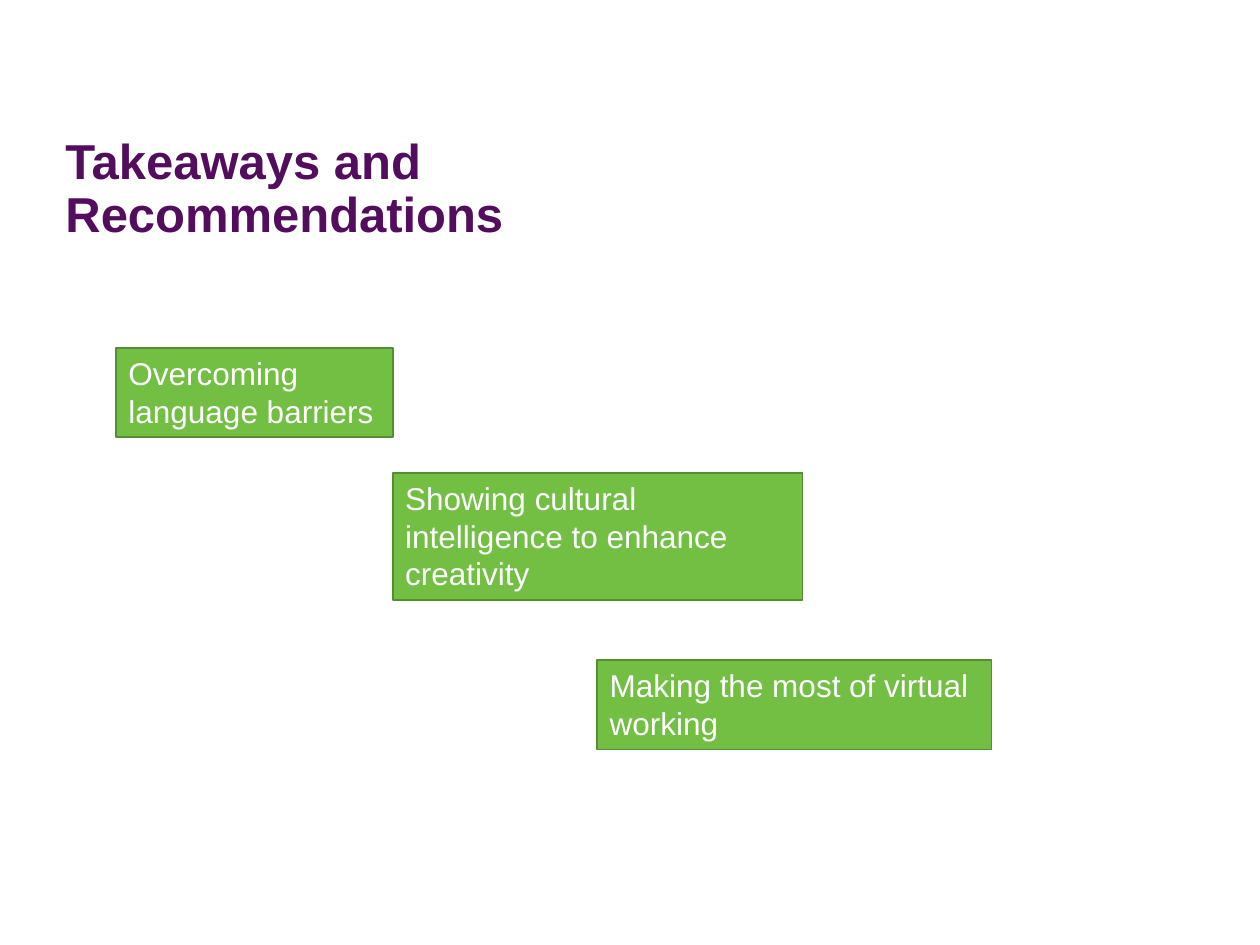
import pptx
import pptx.dml.color
import pptx.enum.shapes
import pptx.enum.text
import pptx.util

Cm = pptx.util.Cm
Pt = pptx.util.Pt
ANCHOR = pptx.enum.text.MSO_ANCHOR

COLOURS = {"title": "520D5D", "fill": "72BF44", "line": "548D32", "text": "FFFFFF"}
TITLE_FORMAT = {"name": "Arial", "size": Pt(28), "bold": True}
STEP_FORMAT = {"name": "Arial", "size": Pt(18)}
STEPS = [
    ("Overcoming language barriers", (2.34, 7.01, 5.59, 1.8)),
    ("Showing cultural intelligence to enhance creativity", (7.92, 9.53, 8.26, 2.57)),
    ("Making the most of virtual working", (12.04, 13.31, 7.95, 1.8)),
]


def colour(name):
    """Return the named colour."""
    return pptx.dml.color.RGBColor.from_string(COLOURS[name])


def write_text(box, text, font_format, colour_name, anchor):
    """Write one wrapped, left-aligned paragraph and return it."""
    frame = box.text_frame
    frame.word_wrap = True
    frame.vertical_anchor = anchor
    para = frame.paragraphs[0]
    para.alignment = pptx.enum.text.PP_ALIGN.LEFT
    span = para.add_run()
    span.text = text
    for attribute, value in font_format.items():
        setattr(span.font, attribute, value)
    span.font.color.rgb = colour(colour_name)
    return para


def add_title(page, text, place):
    """Add the slide title."""
    box = page.shapes.add_textbox(*map(Cm, place))
    para = write_text(box, text, TITLE_FORMAT, "title", ANCHOR.MIDDLE)
    para.line_spacing = 0.9


def add_step(page, text, place):
    """Add one green box of the staircase."""
    box = page.shapes.add_shape(
        pptx.enum.shapes.MSO_SHAPE.RECTANGLE, *map(Cm, place)
    )
    box.shadow.inherit = False
    box.fill.solid()
    box.fill.fore_color.rgb = colour("fill")
    box.line.color.rgb = colour("line")
    box.line.width = Pt(1)
    write_text(box, text, STEP_FORMAT, "text", ANCHOR.TOP)
    box.text_frame.auto_size = pptx.enum.text.MSO_AUTO_SIZE.SHAPE_TO_FIT_TEXT


def main():
    """Build the takeaways slide and save it."""
    deck = pptx.Presentation()
    deck.slide_width, deck.slide_height = Cm(25.4), Cm(19.05)
    page = deck.slides.add_slide(deck.slide_layouts[6])
    add_title(page, "Takeaways and Recommendations", (1.07, 0.64, 11.63, 6.38))
    for text, place in STEPS:
        add_step(page, text, place)
    deck.save("out.pptx")


if __name__ == "__main__":
    main()
